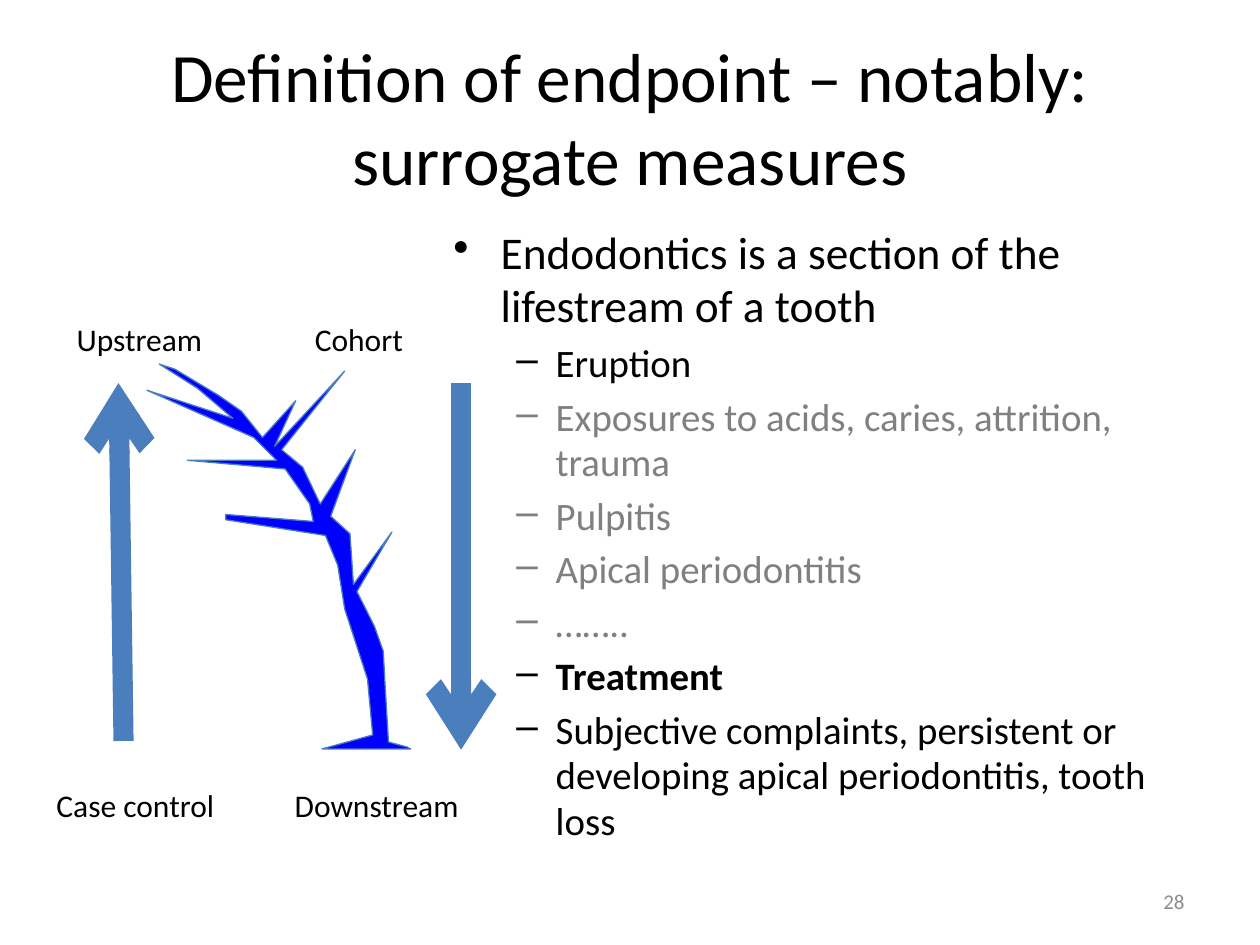
"""Build the slide on surrogate endpoints with the lifestream drawing."""
import pptx
import pptx.dml.color
import pptx.enum.shapes
import pptx.enum.text
import pptx.oxml
import pptx.oxml.ns
import pptx.util

Pt = pptx.util.Pt
RGB = pptx.dml.color.RGBColor
ALIGN = pptx.enum.text.PP_ALIGN
ANCHOR = pptx.enum.text.MSO_ANCHOR

THEME = {
    "font": "Calibri",
    "title": 39.6, "topic": 25.9, "item": 22.2, "label": 18, "number": 12,
    "black": RGB.from_string("000000"), "gray": RGB.from_string("808080"),
    "pale": RGB.from_string("8C8C8C"), "stream": RGB.from_string("0000FF"),
    "line": RGB.from_string("4B7EBC"),
}


def add_box(left, top, width, height, **frame_format):
    """Add a text box, lengths in points, and return its text frame."""
    frame = page.shapes.add_textbox(Pt(left), Pt(top), Pt(width), Pt(height)).text_frame
    for name, value in {"word_wrap": True, **frame_format}.items():
        setattr(frame, name, value)
    return frame


def write(para, text, size, color="black", bold=False):
    """Write one span of text into a paragraph."""
    span = para.add_run()
    span.text = text
    span.font.color.rgb = THEME[color]
    for name, value in {"name": THEME["font"], "size": Pt(THEME[size]), "bold": bold}.items():
        setattr(span.font, name, value)


deck = pptx.Presentation()
deck.slide_width, deck.slide_height = Pt(720), Pt(540)
page = deck.slides.add_slide(deck.slide_layouts[6])

title = add_box(36, 21.6, 648, 90, vertical_anchor=ANCHOR.MIDDLE).paragraphs[0]
title.alignment = ALIGN.CENTER
write(title, "Definition of endpoint – notably: surrogate measures", "title")

body = add_box(252, 126, 432, 356.4)
ITEMS = [
    ("Endodontics is a section of the lifestream of a tooth", "topic", "black", False),
    ("Eruption", "item", "black", False),
    ("Exposures to acids, caries, attrition, trauma", "item", "gray", False),
    ("Pulpitis", "item", "gray", False),
    ("Apical periodontitis", "item", "gray", False),
    ("……..", "item", "gray", False),
    ("Treatment", "item", "black", True),
    ("Subjective complaints, persistent or developing apical periodontitis, tooth loss",
     "item", "black", False),
]
BULLETS = {"topic": ("•", 27, -27, 0), "item": ("–", 58.5, -22.5, 1)}
for index, (text, size, color, bold) in enumerate(ITEMS):
    para = body.add_paragraph() if index else body.paragraphs[0]
    mark, margin, indent, level = BULLETS[size]
    properties = para._p.get_or_add_pPr()
    properties.set("marL", str(Pt(margin)))
    properties.set("indent", str(Pt(indent)))
    properties.append(pptx.oxml.parse_xml(
        f'<a:buChar {pptx.oxml.ns.nsdecls("a")} char="{mark}"/>'))
    para.level = level
    para.line_spacing = 0.98
    para.space_before = Pt(0.2 * THEME[size] if index else 0)
    write(para, text, size, color, bold)

number = add_box(516, 500.4, 168, 28.8, vertical_anchor=ANCHOR.MIDDLE).paragraphs[0]
number.alignment = ALIGN.RIGHT
write(number, "28", "number", "pale")

STREAM = [
    (235, 428), (184, 428), (213, 420), (210, 388), (197, 348), (193, 323),
    (186, 306), (129, 297), (129, 294), (179, 298), (177, 288), (163, 268),
    (107, 263), (158, 263), (145, 250), (84, 223), (133, 239), (113, 222),
    (91, 208), (100, 211), (125, 226), (138, 235), (150, 250), (169, 229),
    (157, 255), (197, 212), (161, 257), (173, 267), (183, 288), (203, 257),
    (189, 295), (200, 305), (202, 334), (224, 304), (204, 338), (214, 358),
    (219, 372), (220, 390), (222, 424), (233, 427),
]
outline = page.shapes.build_freeform(*STREAM[0], scale=float(Pt(1)))
outline.add_line_segments(STREAM[1:], close=False)
stream = outline.convert_to_shape()
stream.shadow.inherit = False
stream.fill.solid()
stream.fill.fore_color.rgb = THEME["stream"]
stream.line.color.rgb = THEME["line"]
stream.line.width = Pt(0.75)

ARROWS = [(263.5, 218.9, 263.5, 428.4), (70.6, 423.4, 67.7, 218.9)]
for ends in ARROWS:
    arrow = page.shapes.add_connector(
        pptx.enum.shapes.MSO_CONNECTOR.STRAIGHT, *map(Pt, ends))
    arrow.line.color.rgb = THEME["line"]
    arrow.line.width = Pt(11.5)
    arrow.line._get_or_add_ln().append(pptx.oxml.parse_xml(
        f'<a:tailEnd {pptx.oxml.ns.nsdecls("a")} type="arrow"/>'))
    arrow._element.spPr.append(pptx.oxml.parse_xml(
        f'<a:effectLst {pptx.oxml.ns.nsdecls("a")}/>'))

UPPER, LOWER = 179.3, 445.7
LABELS = [
    ("Upstream", 36.7, UPPER, 93.6),
    ("Downstream", 161.3, LOWER, 116.6),
    ("Case control", 25.2, LOWER, 105.8),
    ("Cohort", 172.8, UPPER, 65.5),
]
for text, left, top, width in LABELS:
    label = add_box(left, top, width, 28.8, word_wrap=False,
                    auto_size=pptx.enum.text.MSO_AUTO_SIZE.SHAPE_TO_FIT_TEXT)
    write(label.paragraphs[0], text, "label")

deck.save("out.pptx")
